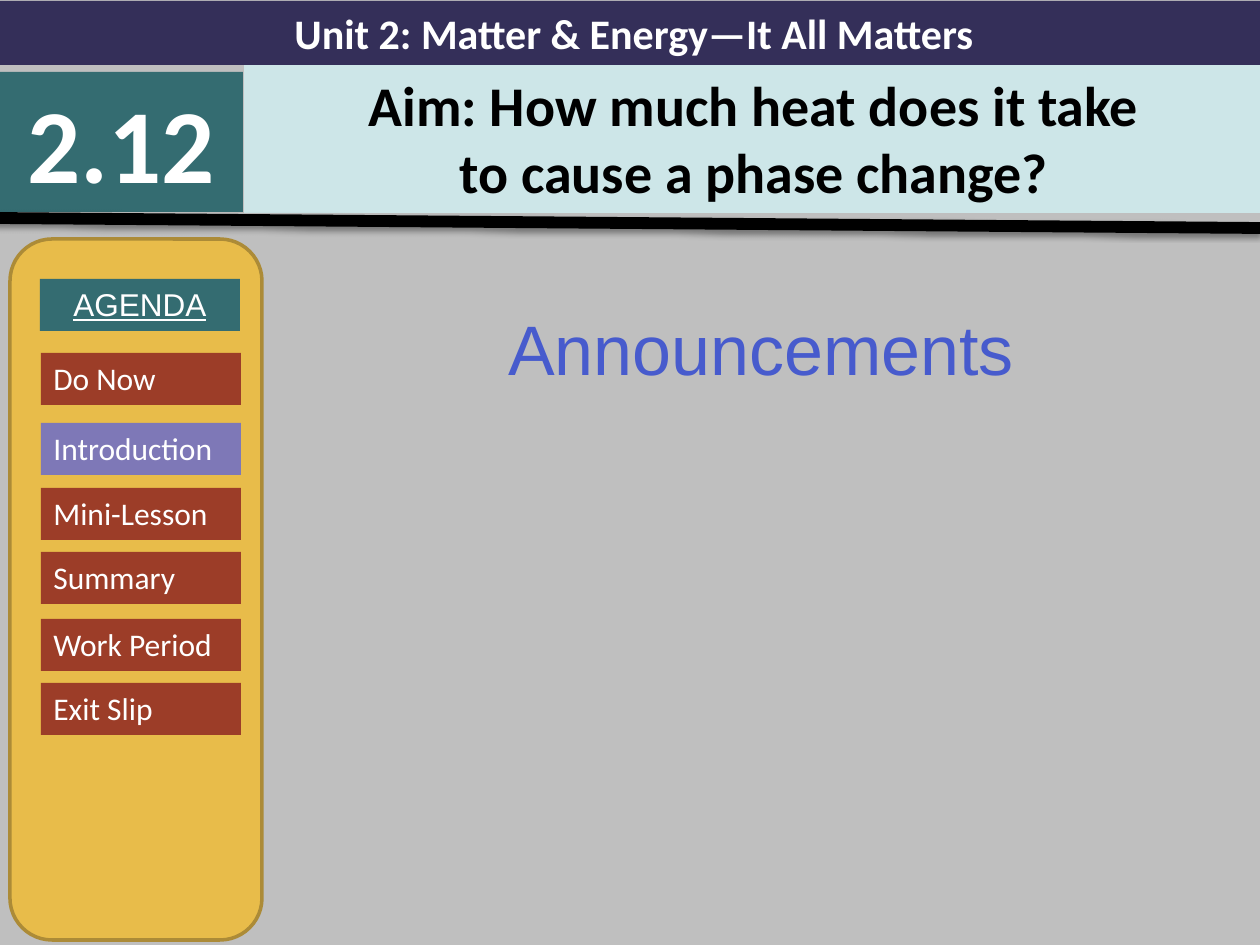
from lxml import etree
from pptx import Presentation
from pptx import util as u
from pptx.dml.color import RGBColor
from pptx.enum import shapes, text
from pptx.oxml.ns import qn

EMU_PER_PX = 914400 / 126
GRAY = RGBColor(0xBF, 0xBF, 0xBF)
NAVY = RGBColor(0x34, 0x2F, 0x59)
TEAL = RGBColor(0x34, 0x6C, 0x71)
PALE = RGBColor(0xCD, 0xE6, 0xE8)
GOLD = RGBColor(0xE8, 0xBC, 0x4A)
BRONZE = RGBColor(0xAC, 0x8B, 0x37)
RUST = RGBColor(0x9C, 0x3D, 0x28)
LILAC = RGBColor(0x7E, 0x78, 0xB7)
BLUE = RGBColor(0x47, 0x5B, 0xCD)
WHITE = RGBColor(0xFF, 0xFF, 0xFF)
BLACK = RGBColor(0, 0, 0)
CENTER = text.PP_ALIGN.CENTER
LEFT = text.PP_ALIGN.LEFT


def px(*lengths):
    return [u.Emu(round(length * EMU_PER_PX)) for length in lengths]


class SlideBuilder:
    def __init__(self, slide, font="Calibri"):
        self.slide = slide
        self.font = font

    def background(self, color):
        fill = self.slide.background.fill
        fill.solid()
        fill.fore_color.rgb = color

    def add_lines(self, shape, lines, size, color, align=CENTER, bold=False,
                  underline=False, font=None):
        frame = shape.text_frame
        frame.word_wrap = True
        frame.auto_size = text.MSO_AUTO_SIZE.NONE
        frame.vertical_anchor = text.MSO_ANCHOR.TOP
        for index, line in enumerate(lines):
            paragraph = frame.paragraphs[0] if index == 0 else frame.add_paragraph()
            paragraph.alignment = align
            run = paragraph.add_run()
            run.text = line
            run.font.name = font or self.font
            run.font.size = u.Pt(size)
            run.font.bold = bold
            run.font.underline = underline
            run.font.color.rgb = color

    def title(self, box, lines, fill, size, color):
        shape = self.slide.shapes.title
        shape.left, shape.top, shape.width, shape.height = px(*box)
        shape.fill.solid()
        shape.fill.fore_color.rgb = fill
        self.add_lines(shape, lines, size, color, bold=True)

    def block(self, box, fill, parent=None, kind=shapes.MSO_SHAPE.RECTANGLE, outline=None):
        container = parent or self.slide
        shape = container.shapes.add_shape(kind, *px(*box))
        shape.shadow.inherit = False
        shape.fill.solid()
        shape.fill.fore_color.rgb = fill
        if outline is None:
            shape.line.fill.background()
        else:
            shape.line.color.rgb = outline
            shape.line.width = u.Pt(2)
        return shape

    def label(self, box, fill, words, size, parent=None, **style):
        shape = self.block(box, fill, parent)
        self.add_lines(shape, [words], size, WHITE, **style)

    def textbox(self, box, words, size, color, font):
        shape = self.slide.shapes.add_textbox(*px(*box))
        self.add_lines(shape, [words], size, color, font=font)
        paragraph = shape.text_frame.paragraphs[0]
        paragraph.line_spacing = 1.5
        paragraph.space_before = u.Pt(size * 0.2)

    def rule(self, ends, color, width):
        line = self.slide.shapes.add_connector(shapes.MSO_CONNECTOR.STRAIGHT, *px(*ends))
        line.line.color.rgb = color
        line.line.width = u.Pt(width)
        effects = etree.SubElement(line._element.spPr, qn("a:effectLst"))
        shadow = etree.SubElement(
            effects, qn("a:outerShdw"), blurRad=str(int(u.Pt(3.1))),
            dist=str(int(u.Pt(1.6))), dir="5400000", rotWithShape="0")
        shade = etree.SubElement(shadow, qn("a:srgbClr"), val=str(color))
        etree.SubElement(shade, qn("a:alpha"), val="38000")

    def agenda(self, panel, heading, items):
        group = self.slide.shapes.add_group_shape()
        self.block(panel, GOLD, group, shapes.MSO_SHAPE.ROUNDED_RECTANGLE, BRONZE)
        self.label((40, 279, 200, 52), TEAL, heading, 18, group,
                   underline=True, font="Arial")
        for words, top, fill in items:
            self.label((41, top, 200, 52), fill, words, 18, group, align=LEFT)


def main():
    presentation = Presentation()
    presentation.slide_width, presentation.slide_height = px(1260, 945)
    slide = presentation.slides.add_slide(presentation.slide_layouts[5])
    builder = SlideBuilder(slide)
    builder.background(GRAY)
    builder.title((244, 64, 1020, 149),
                  ["Aim: How much heat does it take", " to cause a phase change? "],
                  PALE, 32, BLACK)
    builder.textbox((262, 257, 998, 688), "Announcements", 40, BLUE, "Arial")
    builder.label((0, 1, 1268, 64), NAVY, "Unit 2: Matter & Energy—It All Matters", 24,
                  bold=True)
    builder.label((0, 72, 243, 140), TEAL, "2.12", 60, bold=True)
    builder.rule((-6, 218, 1260, 228), BLACK, 6.75)
    builder.agenda((10, 239, 252, 701), "AGENDA", [
        ("Do Now", 353, RUST),
        ("Introduction", 423, LILAC),
        ("Mini-Lesson", 488, RUST),
        ("Summary", 552, RUST),
        ("Work Period", 619, RUST),
        ("Exit Slip", 683, RUST),
    ])
    presentation.save("out.pptx")


if __name__ == "__main__":
    main()
